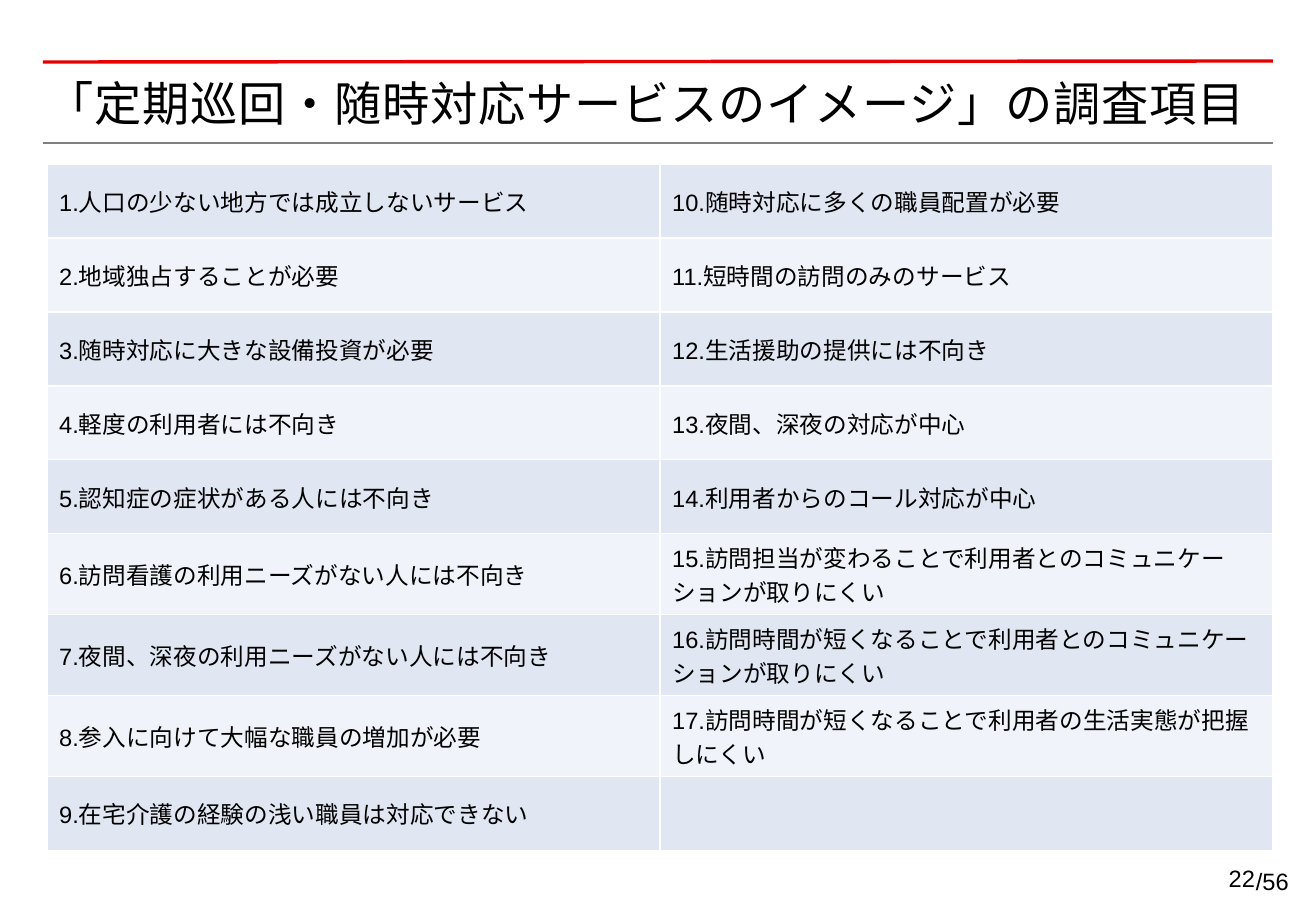
from itertools import zip_longest

from lxml.etree import SubElement
from pptx import Presentation
from pptx.dml.color import RGBColor
from pptx.enum.shapes import MSO_CONNECTOR as Connector
from pptx.enum.text import MSO_ANCHOR as Anchor, PP_ALIGN as Align
from pptx.oxml.ns import qn
from pptx.util import Pt

EMU_PER_PX = 914400 / 121.5

BLACK = RGBColor(0x00, 0x00, 0x00)
WHITE = RGBColor(0xFF, 0xFF, 0xFF)
RED = RGBColor(0xE6, 0x00, 0x00)
GRAY = RGBColor(0x80, 0x80, 0x80)
BANDS = [RGBColor(0xE0, 0xE7, 0xF2), RGBColor(0xF0, 0xF3, 0xF9)]

LATIN_FONT = "Arial"
JAPANESE_FONT = "Noto Sans CJK JP"

TITLE = "「定期巡回・随時対応サービスのイメージ」の調査項目"
SURVEY_ITEMS = [
    "人口の少ない地方では成立しないサービス",
    "地域独占することが必要",
    "随時対応に大きな設備投資が必要",
    "軽度の利用者には不向き",
    "認知症の症状がある人には不向き",
    "訪問看護の利用ニーズがない人には不向き",
    "夜間、深夜の利用ニーズがない人には不向き",
    "参入に向けて大幅な職員の増加が必要",
    "在宅介護の経験の浅い職員は対応できない",
    "随時対応に多くの職員配置が必要",
    "短時間の訪問のみのサービス",
    "生活援助の提供には不向き",
    "夜間、深夜の対応が中心",
    "利用者からのコール対応が中心",
    "訪問担当が変わることで利用者とのコミュニケーションが取りにくい",
    "訪問時間が短くなることで利用者とのコミュニケーションが取りにくい",
    "訪問時間が短くなることで利用者の生活実態が把握しにくい",
]
ROW_COUNT = 9
ROW_HEIGHT, TALL_ROW_HEIGHT = 74, 81
TALL_ROWS = range(5, 8)


def px(*lengths):
    """Turn px lengths into a list of EMU lengths."""
    return [round(length * EMU_PER_PX) for length in lengths]


def set_all(target, values):
    for name, value in values.items():
        setattr(target, name, value)


class SlideBuilder:
    def __init__(self, deck):
        self.page = deck.slides.add_slide(deck.slide_layouts[6])
        self.font = {"name": LATIN_FONT, "size": Pt(14), "color": BLACK}

    def add_span(self, para, text, spacing=None, **font):
        """Add one styled run; spacing is in hundredths of a point."""
        span = para.add_run()
        span.text = text
        style = {**self.font, **font}
        span.font.color.rgb = style.pop("color")
        set_all(span.font, style)
        properties = span.font._element
        SubElement(properties, qn("a:ea")).set("typeface", JAPANESE_FONT)
        if spacing:
            properties.set("spc", str(spacing))

    def text(self, area, text, frame=None, para=None, **font):
        box = self.page.shapes.add_textbox(*px(*area)).text_frame
        set_all(box, {"word_wrap": True, **(frame or {})})
        set_all(box.paragraphs[0], para or {})
        self.add_span(box.paragraphs[0], text, **font)

    def rule(self, ends, color, width):
        line = self.page.shapes.add_connector(Connector.STRAIGHT, *px(*ends))
        line.line.color.rgb = color
        line.line.width = Pt(width)
        SubElement(line._element.spPr, qn("a:effectLst"))

    def cell(self, cell, text, fill):
        properties = cell._tc.get_or_add_tcPr()
        for side in ("lnL", "lnR", "lnT", "lnB"):
            border = SubElement(properties, qn(f"a:{side}"), w=str(Pt(1)))
            paint = SubElement(border, qn("a:solidFill"))
            SubElement(paint, qn("a:srgbClr"), val=str(WHITE))
        cell.fill.solid()
        cell.fill.fore_color.rgb = fill
        cell.vertical_anchor = Anchor.MIDDLE
        if text:
            self.add_span(cell.text_frame.paragraphs[0], text)

    def table(self, left, top, column_width, row_heights, rows):
        columns = len(rows[0])
        area = px(left, top, column_width * columns, sum(row_heights))
        table = self.page.shapes.add_table(len(rows), columns, *area).table
        set_all(table, {"first_row": False, "horz_banding": False})
        for column in table.columns:
            column.width, = px(column_width)
        for index, (height, texts) in enumerate(zip(row_heights, rows)):
            table.rows[index].height, = px(height)
            for cell, text in zip(table.rows[index].cells, texts):
                self.cell(cell, text, BANDS[index % 2])


def main():
    deck = Presentation()
    deck.slide_width, deck.slide_height = px(1316, 911)
    slide = SlideBuilder(deck)

    slide.rule((43, 62, 1273, 61), RED, 2)
    slide.rule((43, 143, 1273, 143), GRAY, 1.25)
    no_sides = {"margin_left": 0, "margin_right": 0}
    slide.text((47, 69, 1226, 69), TITLE, {**no_sides, "margin_top": Pt(3)},
               spacing=50, name=JAPANESE_FONT, size=Pt(28))

    numbered = [f"{number}.{item}" for number, item in enumerate(SURVEY_ITEMS, 1)]
    rows = list(zip_longest(numbered[:ROW_COUNT], numbered[ROW_COUNT:], fillvalue=""))
    heights = [TALL_ROW_HEIGHT if row in TALL_ROWS else ROW_HEIGHT
               for row in range(ROW_COUNT)]
    slide.table(47, 164, 613, heights, rows)

    slide.text((1196, 858, 59, 41), "22", no_sides, {"alignment": Align.RIGHT})
    slide.text((1244, 855, 60, 44), "/56", para={"line_spacing": 1.2})
    deck.save("out.pptx")


if __name__ == "__main__":
    main()
